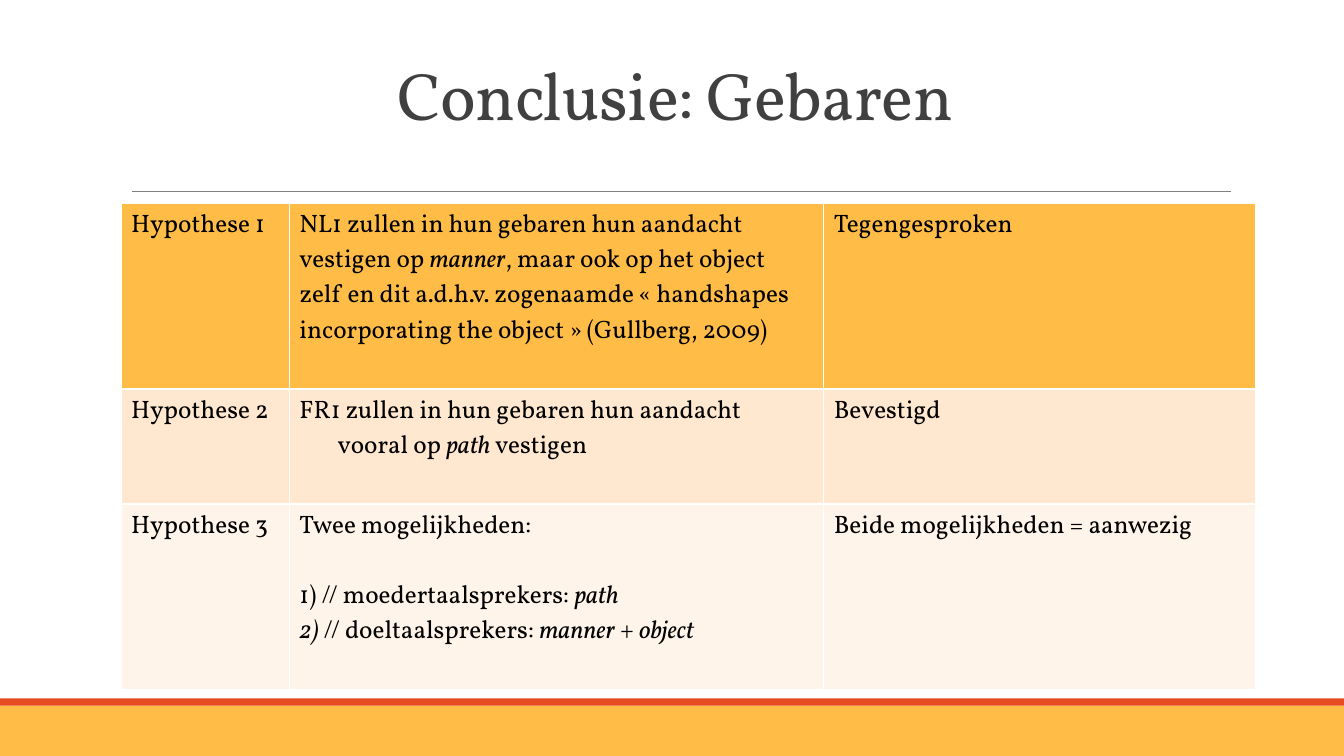
"""Build the slide that weighs three hypotheses about gestures."""
from lxml.etree import SubElement
from pptx import Presentation
from pptx.dml.color import RGBColor
from pptx.enum.shapes import MSO_CONNECTOR, MSO_SHAPE
from pptx.enum.text import MSO_ANCHOR, PP_ALIGN
from pptx.oxml.ns import qn
from pptx.util import Inches, Pt

FONT = "Vollkorn"
COLORS = {
    "gold": "FFBD47", "red": "E84C22", "peach": "FFE8CF", "cream": "FFF4E9",
    "rule": "808080", "title": "404040", "text": "000000",
}


def color(name):
    return RGBColor.from_string(COLORS[name])


def style(par, size, name):
    par.font.name = FONT
    par.font.size = Pt(size)
    par.font.color.rgb = color(name)


deck = Presentation()
deck.slide_width = Inches(13.33)
deck.slide_height = Inches(7.5)
slide = deck.slides.add_slide(deck.slide_layouts[5])
shapes = slide.shapes

for top, height, name in [(7, 0.5, "gold"), (6.93, 0.07, "red")]:
    bar = shapes.add_shape(
        MSO_SHAPE.RECTANGLE, 0, Inches(top), deck.slide_width, Inches(height))
    bar.shadow.inherit = False
    bar.fill.solid()
    bar.fill.fore_color.rgb = color(name)
    bar.line.fill.background()

rule = shapes.add_connector(
    MSO_CONNECTOR.STRAIGHT, Inches(1.31), Inches(1.9), Inches(12.21), Inches(1.9))
rule.line.color.rgb = color("rule")
rule.line.width = Pt(0.5)
SubElement(rule.element.spPr, qn("a:effectLst"))

title = shapes.title
title.left, title.top = Inches(1.2), Inches(0.48)
title.width, title.height = Inches(11), Inches(0.9)
frame = title.text_frame
frame.text = "Conclusie: Gebaren"
frame.vertical_anchor = MSO_ANCHOR.BOTTOM
head = frame.paragraphs[0]
head.alignment = PP_ALIGN.CENTER
head.line_spacing = 0.85
style(head, 48, "title")
head.runs[0].font.element.set("spc", "-50") if hasattr(head.runs[0].font, "element") else \
    head.runs[0]._r.get_or_add_rPr().set("spc", "-50")

widths = [1.67, 5.3, 4.28]
rows = [
    (1.84, "gold", [
        "Hypothese 1",
        "NL1 zullen in hun gebaren hun aandacht vestigen op *manner*, maar ook op "
        "het object zelf en dit a.d.h.v. zogenaamde « handshapes incorporating "
        "the object » (Gullberg, 2009)",
        "Tegengesproken"]),
    (1.14, "peach", [
        "Hypothese 2",
        "FR1 zullen in hun gebaren hun aandacht vooral op *path *vestigen",
        "Bevestigd"]),
    (1.84, "cream", [
        "Hypothese 3",
        "Twee mogelijkheden:\n1) // moedertaalsprekers: *path*\n"
        "*2) *// doeltaalsprekers: *manner* + *object*",
        "Beide mogelijkheden = aanwezig"]),
]
grid = shapes.add_table(
    len(rows), len(widths), Inches(1.2), Inches(2.02),
    Inches(sum(widths)), Inches(sum(row[0] for row in rows))).table
grid.first_row = False
grid.horz_banding = False
for col, width in zip(grid.columns, widths):
    col.width = Inches(width)

for r, (height, fill, texts) in enumerate(rows):
    grid.rows[r].height = Inches(height)
    for c, text in enumerate(texts):
        cell = grid.cell(r, c)
        cell.fill.solid()
        cell.fill.fore_color.rgb = color(fill)
        for n, line in enumerate(text.split("\n")):
            body = cell.text_frame
            par = body.add_paragraph() if n else body.paragraphs[0]
            style(par, 18, "text")
            for k, part in enumerate(line.split("*")):
                if part:
                    run = par.add_run()
                    run.text = part
                    if k % 2:
                        run.font.italic = True

hang = grid.cell(1, 1).text_frame.paragraphs[0]._p.get_or_add_pPr()
hang.set("marL", str(Inches(0.38)))
hang.set("indent", str(-Inches(0.38)))
grid.cell(2, 1).text_frame.paragraphs[1].space_before = Pt(25)

deck.save("out.pptx")
